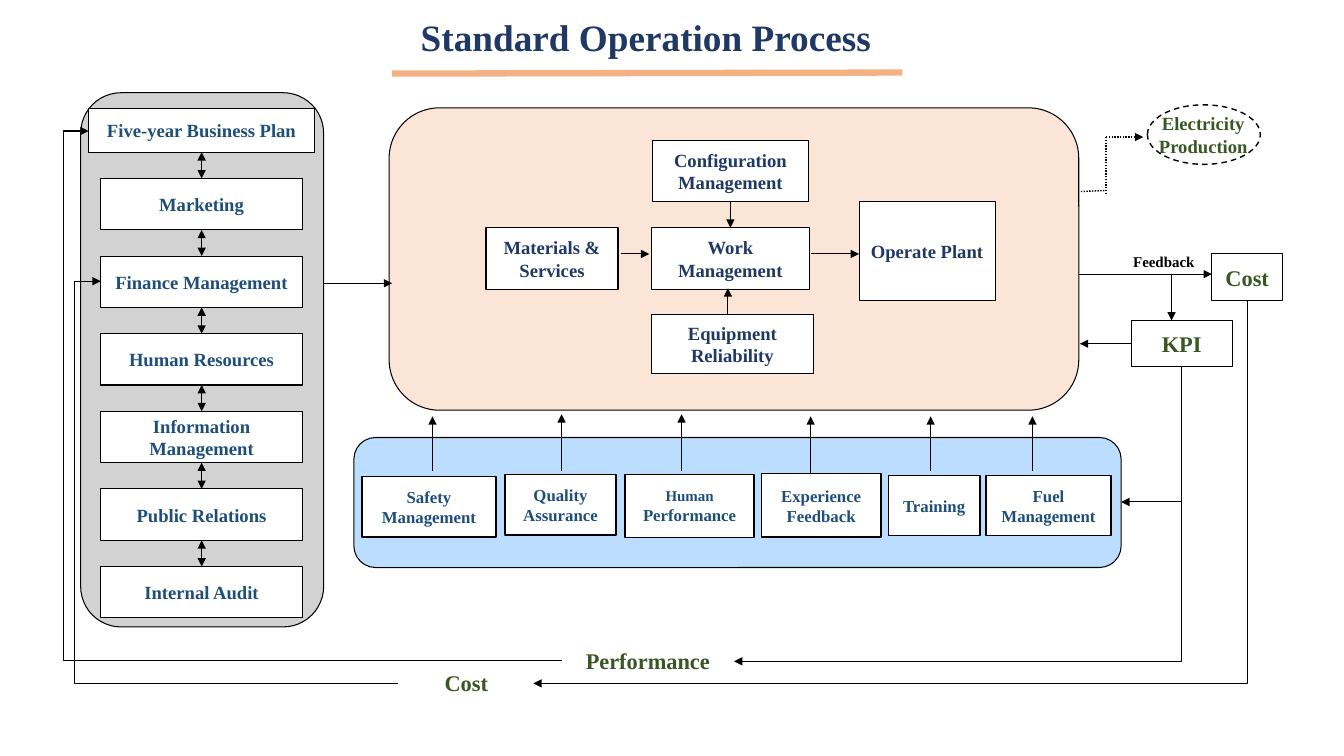
"""Build the Standard Operation Process flow slide."""
from lxml.etree import SubElement
from pptx import Presentation
from pptx.dml.color import RGBColor
from pptx.enum.dml import MSO_LINE
from pptx.enum.shapes import MSO_CONNECTOR, MSO_SHAPE
from pptx.enum.text import MSO_ANCHOR, PP_ALIGN
from pptx.oxml.ns import qn
from pptx.util import Inches, Pt

FONT = "Times New Roman"
COLORS = {
    "black": "000000", "white": "FFFFFF", "navy": "203864", "blue": "1F4E79",
    "green": "385723", "orange": "F4B183", "peach": "FBE5D6",
    "sky": "99CCFF", "gray": "C0C0C0",
}


class FlowSlide:
    """Holds the style and the current slide."""

    def __init__(self, presentation):
        self.slide = presentation.slides.add_slide(presentation.slide_layouts[6])

    def color(self, name):
        return RGBColor.from_string(COLORS[name])

    def set_text(self, shape, runs, size, color, align=PP_ALIGN.CENTER, anchor=MSO_ANCHOR.MIDDLE):
        frame = shape.text_frame
        frame.word_wrap = True
        frame.vertical_anchor = anchor
        paragraph = frame.paragraphs[0]
        paragraph.alignment = align
        paragraph.font.name = FONT
        paragraph.font.bold = True
        paragraph.font.size = Pt(size)
        paragraph.font.color.rgb = self.color(color)
        for text, run_size in runs:
            run = paragraph.add_run()
            run.text = text
            if run_size:
                run.font.size = Pt(run_size)

    def outline(self, kind, box, fill=None, width=0.75, alpha=None):
        shape = self.slide.shapes.add_shape(kind, *map(Inches, box))
        shape.shadow.inherit = False
        shape.line.color.rgb = self.color("black")
        shape.line.width = Pt(width)
        if fill is None:
            shape.fill.background()
        else:
            shape.fill.solid()
            shape.fill.fore_color.rgb = self.color(fill)
        if alpha:
            fill_color = shape._element.spPr.find(qn("a:solidFill"))[0]
            SubElement(fill_color, qn("a:alpha"), val=str(alpha * 1000))
        return shape

    def panel(self, box, fill, alpha=None):
        return self.outline(MSO_SHAPE.ROUNDED_RECTANGLE, box, fill, alpha=alpha)

    def box(self, text, box, size=13.3, color="navy", width=0.75):
        shape = self.outline(MSO_SHAPE.RECTANGLE, box, "white", width)
        runs = [(text, None)] if isinstance(text, str) else text
        self.set_text(shape, runs, size, color)
        return shape

    def label(self, text, box, size, color, align=PP_ALIGN.CENTER, anchor=MSO_ANCHOR.TOP):
        shape = self.slide.shapes.add_textbox(*map(Inches, box))
        self.set_text(shape, [(text, None)], size, color, align, anchor)

    def line(self, start, end, head=False, tail=True, width=0.75, color="black",
             dash=None, kind=MSO_CONNECTOR.STRAIGHT):
        connector = self.slide.shapes.add_connector(kind, *map(Inches, start + end))
        connector.line.color.rgb = self.color(color)
        connector.line.width = Pt(width)
        if dash:
            connector.line.dash_style = dash
        properties = connector._element.spPr
        stroke = properties.find(qn("a:ln"))
        for wanted, tag in ((head, "a:headEnd"), (tail, "a:tailEnd")):
            if wanted:
                SubElement(stroke, qn(tag), type="triangle")
        SubElement(properties, qn("a:effectLst"))
        return connector

    def down_then_left(self, start, end):
        center_x, center_y = (start[0] + end[0]) / 2, (start[1] + end[1]) / 2
        half_width, half_height = (end[1] - start[1]) / 2, (start[0] - end[0]) / 2
        connector = self.line((center_x - half_width, center_y - half_height),
                              (center_x + half_width, center_y + half_height),
                              kind=MSO_CONNECTOR.ELBOW)
        properties = connector._element.spPr
        properties.find(qn("a:xfrm")).set("rot", str(90 * 60000))
        properties.find(qn("a:prstGeom")).set("prst", "bentConnector2")

    def around_left(self, start, end, turn_x):
        connector = self.line(start, end, kind=MSO_CONNECTOR.ELBOW)
        ratio = (start[0] - turn_x) / (start[0] - end[0])
        geometry = connector._element.spPr.find(qn("a:prstGeom"))
        SubElement(geometry.find(qn("a:avLst")), qn("a:gd"), name="adj1",
                   fmla=f"val {round(ratio * 100000)}")


def draw_support(flow):
    flow.panel((3.51, 4.34, 7.61, 1.29), "sky", 66)
    functions = [
        ("Safety Management", (3.59, 4.73, 1.33, 0.6)),
        ("Quality Assurance", (5.01, 4.71, 1.1, 0.6)),
        ([("Human ", 10.7), ("Performance", None)], (6.2, 4.71, 1.28, 0.62)),
        ("Experience Feedback", (7.55, 4.7, 1.19, 0.63)),
        ("Training", (8.81, 4.72, 0.91, 0.59)),
        ("Fuel Management", (9.78, 4.72, 1.24, 0.59)),
    ]
    for text, box in functions:
        flow.box(text, box, 12, "blue", 1)
    arrows = [(4.29, 4.67, 4.13), (5.57, 4.67, 4.11), (6.76, 4.67, 4.11),
              (8.04, 4.69, 4.13), (9.23, 4.67, 4.13), (10.24, 4.67, 4.13)]
    for x, bottom, top in arrows:
        flow.line((x, bottom), (x, top))


def draw_plant(flow):
    flow.panel((3.86, 1.07, 6.84, 3), "peach")
    configuration = flow.box("Configuration Management", (6.47, 1.39, 1.55, 0.61))
    work = flow.box("Work Management", (6.46, 2.26, 1.57, 0.61))
    flow.box("Equipment Reliability", (6.46, 3.12, 1.61, 0.59))
    flow.box("Operate Plant", (8.52, 2, 1.35, 0.98))
    flow.box("Materials & Services", (4.82, 2.26, 1.31, 0.61))
    arrow = flow.line((7.25, 2), (7.25, 2.26))
    arrow.begin_connect(configuration, 2)
    arrow.end_connect(work, 0)
    flow.line((6.16, 2.52), (6.44, 2.52))
    flow.line((8.04, 2.52), (8.52, 2.52))
    flow.line((7.22, 3.12), (7.22, 2.86))


def draw_results(flow):
    flow.line((10.7, 2.72), (12.02, 2.72))
    flow.line((11.62, 2.72), (11.62, 3.18))
    flow.box("Cost", (12.02, 2.52, 0.7, 0.46), 16, "green")
    indicator = flow.box("KPI", (11.22, 3.18, 1, 0.46), 16, "green")
    flow.line((11.22, 3.41), (10.71, 3.41)).begin_connect(indicator, 1)
    flow.label("Feedback", (11.14, 2.46, 0.88, 0.28), 10.7, "black", PP_ALIGN.LEFT)
    ellipse = flow.outline(MSO_SHAPE.OVAL, (11.38, 1.04, 1.12, 0.59), width=1)
    ellipse.line.dash_style = MSO_LINE.DASH
    flow.label("Electricity Production", (11.31, 1.07, 1.25, 0.53), 13.3, "green",
               anchor=MSO_ANCHOR.MIDDLE)
    dotted = {"width": 1, "dash": MSO_LINE.ROUND_DOT}
    flow.line((10.72, 1.9), (10.97, 1.89), tail=False, **dotted)
    flow.line((10.97, 1.36), (10.97, 1.92), tail=False, **dotted)
    flow.line((10.97, 1.36), (11.34, 1.36), **dotted)


def draw_business(flow):
    flow.panel((0.8, 0.92, 2.41, 5.3), "gray", 71)
    flow.line((3.21, 2.81), (3.89, 2.81))
    flow.label("Performance", (5.57, 6.37, 1.71, 0.37), 16, "green")
    flow.label("Cost", (3.95, 6.59, 1.35, 0.37), 16, "green")
    flow.down_then_left((11.72, 3.64), (7.28, 6.56))
    flow.down_then_left((11.72, 3.64), (11.12, 4.98))
    flow.down_then_left((12.37, 2.98), (5.29, 6.78))
    flow.around_left((5.57, 6.55), (0.88, 1.3), 0.63)
    flow.around_left((3.95, 6.78), (1, 2.79), 0.74)
    previous = flow.box("Five-year Business Plan", (0.88, 1.08, 2.24, 0.43), color="blue")
    departments = ["Marketing", "Finance Management", "Human Resources",
                   "Information Management", "Public Relations", "Internal Audit"]
    for index, text in enumerate(departments):
        top = 1.77 + 0.77 * index
        department = flow.box(text, (1, top, 2, 0.51), color="blue")
        arrow = flow.line((2, top - 0.26), (2, top), head=True)
        arrow.begin_connect(previous, 2)
        arrow.end_connect(department, 0)
        previous = department


def main():
    presentation = Presentation()
    presentation.slide_width = Inches(13.33)
    presentation.slide_height = Inches(7.5)
    flow = FlowSlide(presentation)
    draw_support(flow)
    draw_plant(flow)
    draw_results(flow)
    draw_business(flow)
    flow.line((3.89, 0.73), (8.95, 0.72), tail=False, width=4.5, color="orange")
    flow.label("Standard Operation Process", (2.65, 0.09, 7.52, 0.55), 26.6, "navy")
    presentation.save("out.pptx")


if __name__ == "__main__":
    main()
